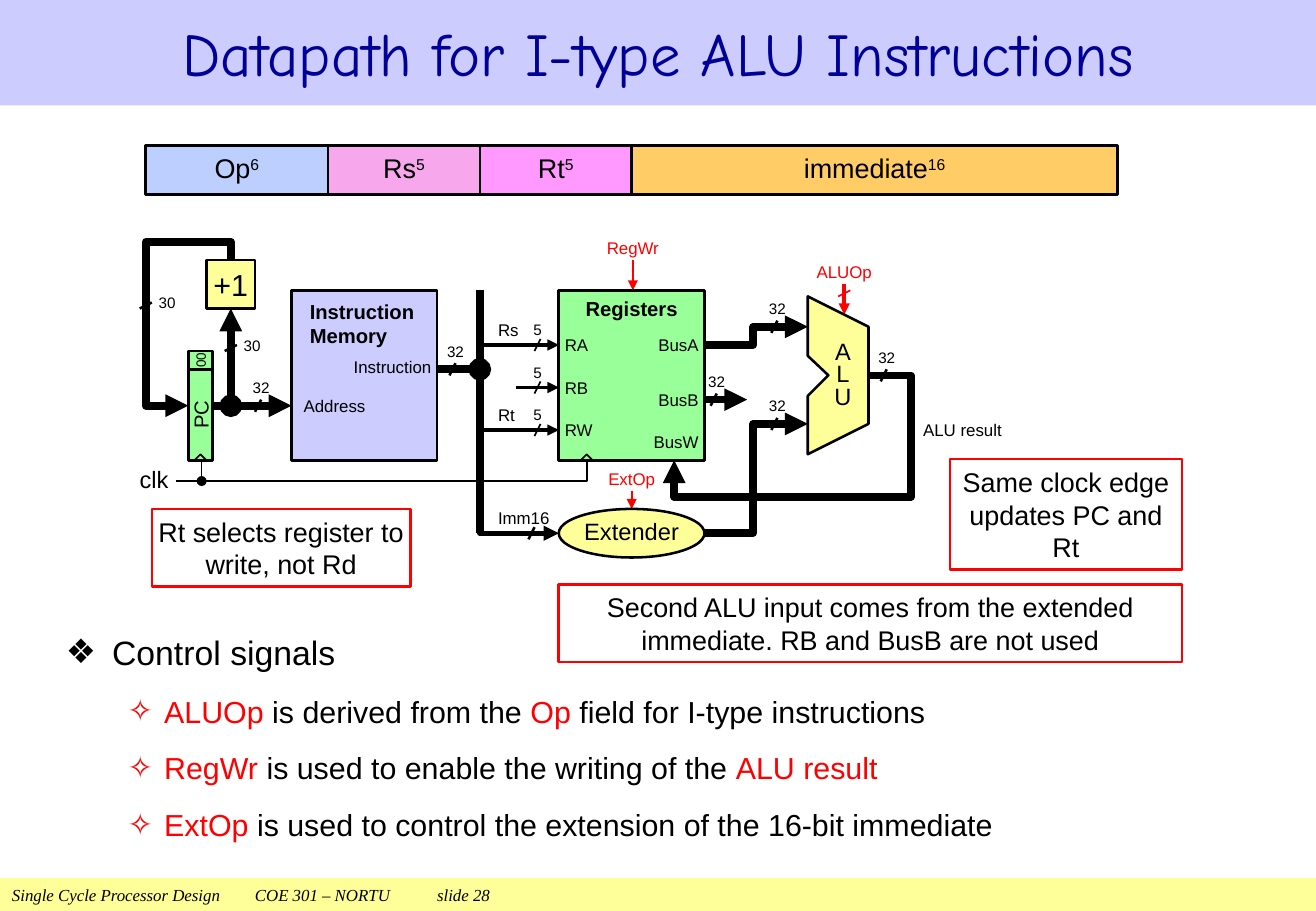
from lxml import etree
from pptx import Presentation
from pptx.dml.color import RGBColor
from pptx.enum.shapes import MSO_CONNECTOR, MSO_SHAPE
from pptx.enum.text import MSO_ANCHOR, MSO_AUTO_SIZE, PP_ALIGN
from pptx.oxml.ns import qn
from pptx.util import Pt

STRAIGHT = MSO_CONNECTOR.STRAIGHT
RECTANGLE, OVAL, TRIANGLE = MSO_SHAPE.RECTANGLE, MSO_SHAPE.OVAL, MSO_SHAPE.ISOSCELES_TRIANGLE
LEFT, CENTER, RIGHT = PP_ALIGN.LEFT, PP_ALIGN.CENTER, PP_ALIGN.RIGHT
TOP, MIDDLE = MSO_ANCHOR.TOP, MSO_ANCHOR.MIDDLE
NO_AUTOFIT = MSO_AUTO_SIZE.NONE

GRID = 3.6
DIAGRAM_SHIFT = -0.7
COLORS = {
    "black": "000000", "red": "FF0000", "navy": "000099", "lavender": "CCCCFF",
    "yellow": "FFFF99", "green": "99FF99", "blue": "BCCFFE", "pink": "F7A7EC",
    "magenta": "FF99FF", "orange": "FFCC66",
}


def color(name):
    return RGBColor.from_string(COLORS[name])


def apply(target, values):
    for name, value in values.items():
        setattr(target, name, value)


def column(x):
    return Pt(round(x * GRID, 2))


def row(y):
    return Pt(round(y * GRID + DIAGRAM_SHIFT, 2))


def add_run(paragraph, text, size, ink="black", font="Arial", bold=False, italic=False):
    run = paragraph.add_run()
    run.text = text
    apply(run.font, {"size": Pt(size), "name": font, "bold": bold, "italic": italic})
    run.font.color.rgb = color(ink)
    return run


def format_frame(frame, anchor=MIDDLE, side=0, end=0):
    apply(frame, {
        "word_wrap": True, "auto_size": NO_AUTOFIT, "vertical_anchor": anchor,
        "margin_left": Pt(side), "margin_right": Pt(side),
        "margin_top": Pt(end), "margin_bottom": Pt(end),
    })


def write(shape, text, size, align=CENTER, spacing=1.0, **font):
    """Put each line of the text in its own paragraph."""
    frame = shape.text_frame
    for index, line in enumerate(text.split("\n")):
        paragraph = frame.add_paragraph() if index else frame.paragraphs[0]
        apply(paragraph, {"alignment": align, "line_spacing": spacing})
        add_run(paragraph, line, size, **font)


def paint(shape, fill, line, width):
    shape.shadow.inherit = False
    if fill:
        shape.fill.solid()
        shape.fill.fore_color.rgb = color(fill)
    else:
        shape.fill.background()
    if line:
        shape.line.color.rgb = color(line)
        shape.line.width = Pt(width)
    else:
        shape.line.fill.background()


def add_block(slide, x, y, width, height, fill=None, line="black", weight=1.5,
              kind=RECTANGLE, rotation=0, **frame):
    shape = slide.shapes.add_shape(kind, column(x), row(y), column(width), column(height))
    shape.rotation = rotation
    paint(shape, fill, line, weight)
    format_frame(shape.text_frame, **frame)
    return shape


def add_label(slide, x, y, width, height, text, size=10, align=LEFT, **style):
    box = slide.shapes.add_textbox(column(x), row(y), column(width), column(height))
    format_frame(box.text_frame)
    write(box, text, size, align, **style)


def add_ends(shape, head, tail):
    outline = shape.line._get_or_add_ln()
    for tag, end in (("a:headEnd", head), ("a:tailEnd", tail)):
        if end:
            etree.SubElement(outline, qn(tag)).set("type", end)


def add_wire(slide, points, weight=4.5, ink="black", head=None, tail="triangle"):
    """Draw a straight wire as a connector and a bent wire as an open outline."""
    places = [(column(x), row(y)) for x, y in points]
    if len(places) == 2:
        wire = slide.shapes.add_connector(STRAIGHT, *places[0], *places[1])
        wire.line.color.rgb = color(ink)
        wire.line.width = Pt(weight)
        add_ends(wire, head, tail)
        etree.SubElement(wire._element.spPr, qn("a:effectLst"))
    else:
        builder = slide.shapes.build_freeform(*places[0])
        builder.add_line_segments(places[1:], close=False)
        wire = builder.convert_to_shape()
        paint(wire, None, ink, weight)
        add_ends(wire, head, tail)


def add_bus_width(slide, x, y, bits, weight=1.5):
    """Mark a horizontal bus with a slash that starts at x, y and its bit count."""
    size = 3 if bits == "5" else 4
    add_wire(slide, [(x, y), (x - 1, y + 2)], weight, tail=None)
    add_label(slide, x - 2, y - size, size, size, bits, 9, CENTER)


def add_title(slide, text):
    title = slide.shapes.title
    apply(title, {"left": 0, "top": 0, "width": Pt(780), "height": Pt(62.5)})
    title.fill.solid()
    title.fill.fore_color.rgb = color("lavender")
    format_frame(title.text_frame, end=3.6)
    write(title, text, 36, ink="navy", font="Comic Neue")


def add_control_list(slide):
    body = slide.placeholders[1]
    apply(body, {"left": Pt(39), "top": Pt(368.6), "width": Pt(702), "height": Pt(139)})
    format_frame(body.text_frame, TOP, end=3.6)
    levels = [("❖", 20, 27.4, -27.4, 0), ("✧", 18, 58.3, -21.6, 9.9)]
    items = [
        (0, [("Control signals", "black")]),
        (1, [("ALUOp ", "red"), ("is derived from the ", "black"), ("Op", "red"),
             (" field for I-type instructions", "black")]),
        (1, [("RegWr", "red"), (" is used to enable the writing of the ", "black"),
             ("ALU result", "red")]),
        (1, [("ExtOp ", "red"),
             ("is used to control the extension of the 16-bit immediate", "black")]),
    ]
    for index, (level, runs) in enumerate(items):
        bullet, size, margin, indent, before = levels[level]
        paragraph = body.text_frame.add_paragraph() if index else body.text_frame.paragraphs[0]
        apply(paragraph, {"level": level, "line_spacing": 1.1, "space_before": Pt(before)})
        properties = paragraph._p.get_or_add_pPr()
        properties.set("marL", str(Pt(margin)))
        properties.set("indent", str(Pt(indent)))
        etree.SubElement(properties, qn("a:buChar")).set("char", bullet)
        for text, ink in runs:
            add_run(paragraph, text, size, ink)


def add_instruction_format(slide):
    x = 24
    for name, bits, width, fill in [("Op", "6", 30, "blue"), ("Rs", "5", 25, "pink"),
                                    ("Rt", "5", 25, "magenta"), ("immediate", "16", 80, "orange")]:
        field = add_block(slide, x, 24.2, width, 8, fill, end=7.2)
        write(field, name, 16, spacing=0.85)
        exponent = add_run(field.text_frame.paragraphs[0], bits, 16)
        exponent.font._element.set("baseline", "30000")
        x += width


def add_control_signals(slide):
    for name, x, y, width, tip, weight in [("ALUOp", 139, 43, 16, 52, 2.25),
                                           ("RegWr", 104.2, 39, 14, 48, 1),
                                           ("ExtOp", 104, 77, 10, 84, 1)]:
        add_label(slide, x - width / 2, y, width, 4, name, align=CENTER, ink="red")
        add_wire(slide, [(x, y + 4), (x, tip)], weight, "red")
    add_wire(slide, [(140, 48), (138, 49)], 1, "red", tail=None)


def add_units(slide):
    add_block(slide, 48, 48, 24, 28, "lavender")
    add_label(slide, 51, 48, 19, 11, "Instruction\nMemory", 12, bold=True)
    add_label(slide, 52, 58, 19, 5, "Instruction", align=RIGHT)
    add_label(slide, 50, 64, 15, 6, "Address")
    write(add_block(slide, 25.5, 66.5, 15, 4, "green", rotation=270), "PC", 12)
    write(add_block(slide, 31.5, 57.5, 3, 4, "green", rotation=270), "00", 8)
    write(add_block(slide, 34, 43, 8, 8, "yellow", side=1), "+1", 18)
    registers = add_block(slide, 92, 48, 24, 28, "green", anchor=TOP, end=3.6)
    write(registers, "Registers", 12, bold=True)
    for port, y in [("RA", 57), ("RB", 64), ("RW", 71)]:
        add_label(slide, 93, y - 2, 9, 4, port)
    for port, y in [("BusA", 55), ("BusB", 64), ("BusW", 71)]:
        add_label(slide, 106, y, 9, 4, port, align=RIGHT)


def add_wires(slide):
    for points in [
        [(35, 67), (48, 67)],
        [(38, 43), (38, 40), (24, 40), (24, 67), (31, 67)],
        [(116, 66), (123, 66)],
        [(143, 62), (150, 62), (150, 82), (111, 82), (111, 76)],
        [(116, 57), (124, 57), (124, 54), (133, 54)],
        [(116, 88), (124, 88), (124, 70), (133, 70)],
    ]:
        add_wire(slide, points)
    add_wire(slide, [(38, 67), (38, 51)], head="oval")
    add_wire(slide, [(72, 61), (79, 61)], tail="oval")
    add_wire(slide, [(79, 48), (79, 88)], tail=None)
    add_wire(slide, [(79, 85), (79, 88), (92, 88)], 3)
    for name, start, y in [("Rs", 79, 57), ("", 85, 64), ("Rt", 79, 71)]:
        add_wire(slide, [(start, y), (92, y)], 2.25)
        add_bus_width(slide, 89, y - 1, "5", 1)
        if name:
            add_label(slide, 82, y - 4, 4, 3, name)
    for x, y in [(75, 60), (43, 66), (118, 65), (128, 69), (146, 61), (128, 53)]:
        add_bus_width(slide, x, y, "32")
    for x, y in [(25, 50), (39, 57)]:
        add_wire(slide, [(x, y), (x - 2, y + 1)], 1.5, tail=None)
        add_label(slide, x, y - 2, 5, 4, "30", 9, CENTER)
    add_wire(slide, [(88, 87), (87, 89)], 1.5, tail=None)
    add_label(slide, 82, 84, 10, 3, "Imm16")
    add_label(slide, 152, 68, 15, 6, "ALU result")


def add_alu_and_extender(slide):
    corners = [(133, 75), (143, 70), (143, 54), (133, 49), (133, 58.8), (136.4, 62), (133, 65.4)]
    places = [(column(x), row(y)) for x, y in corners]
    builder = slide.shapes.build_freeform(*places[0])
    builder.add_line_segments(places[1:], close=True)
    paint(builder.convert_to_shape(), "yellow", "black", 1.5)
    add_label(slide, 134.6, 54, 8.4, 16.2, "A\nL\nU", 14, CENTER, spacing=0.8)
    extender = add_block(slide, 92, 84, 24, 8, "yellow", kind=OVAL)
    write(extender, "Extender", 14, spacing=0.8)


def add_clock(slide):
    add_wire(slide, [(96.6, 76), (96.6, 79.4), (29, 79.4)], 1, tail=None)
    add_wire(slide, [(33.2, 76), (33.2, 79.4)], 1, tail="oval")
    add_label(slide, 23, 77, 6, 4, "clk", 14)
    for x in (32, 95.6):
        add_block(slide, x, 75, 2, 1, weight=1, kind=TRIANGLE)


def add_callouts(slide):
    for x, y, width, height, side, text in [
        (92, 96.4, 102.6, 12.8, 7.2,
         "Second ALU input comes from the extended immediate. RB and BusB are not used"),
        (156.4, 75.8, 38.2, 18.2, 7.2, "Same clock edge updates PC and Rt"),
        (25, 84, 42.6, 12.8, 0, "Rt selects register to write, not Rd"),
    ]:
        write(add_block(slide, x, y, width, height, line="red", side=side), text, 16)


def add_footer(slide):
    footer = add_block(slide, 0, 144.8, 216.67, 5.4, "yellow", None, side=7.2)
    write(footer, "Single Cycle Processor Design\tCOE 301 – NORTU\tslide 28", 10, LEFT,
          font="Times New Roman", italic=True)


def main():
    presentation = Presentation()
    apply(presentation, {"slide_width": Pt(780), "slide_height": Pt(540)})
    slide = presentation.slides.add_slide(presentation.slide_layouts[1])
    add_footer(slide)
    add_title(slide, "Datapath for I-type ALU Instructions")
    add_control_list(slide)
    for add_part in (add_instruction_format, add_control_signals, add_units, add_wires,
                     add_alu_and_extender, add_callouts, add_clock):
        add_part(slide)
    presentation.save("out.pptx")


if __name__ == "__main__":
    main()
